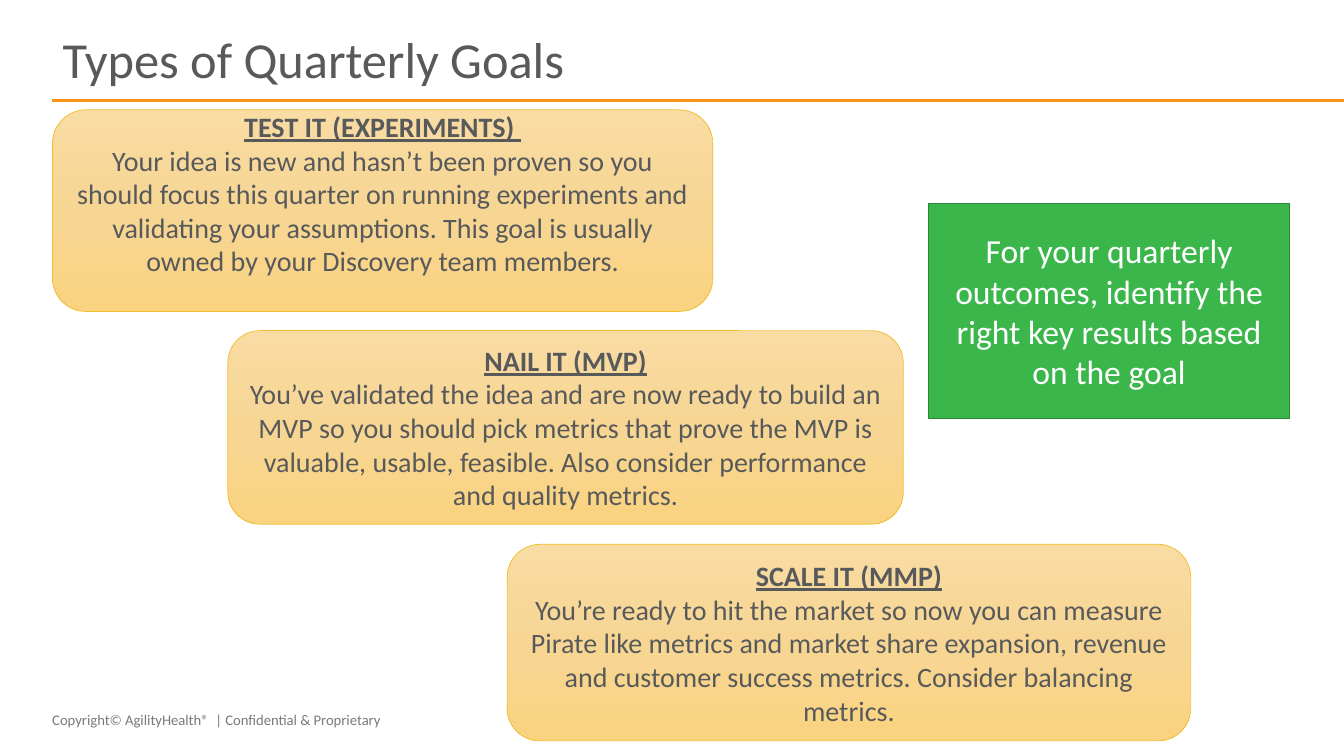
from copy import deepcopy
from lxml.etree import SubElement
from pptx import Presentation
from pptx.dml.color import RGBColor
from pptx.enum.shapes import MSO_CONNECTOR, MSO_SHAPE
from pptx.enum.text import MSO_ANCHOR, MSO_AUTO_SIZE, PP_ALIGN
from pptx.oxml.ns import qn
from pptx.util import Inches, Pt


def paint(color, value):
    color.rgb = RGBColor.from_string(value)


def style(para, size, value, align=PP_ALIGN.CENTER):
    para.alignment = align
    for run in para.runs:
        run.font.name = "Calibri"
        run.font.size = Pt(size)
        paint(run.font.color, value)


deck = Presentation()
deck.slide_width, deck.slide_height = Inches(13.33), Inches(7.5)
slide = deck.slides.add_slide(deck.slide_layouts[5])
shapes = slide.shapes

title = shapes.title
title.left, title.top = Inches(0.52), Inches(0.27)
title.width, title.height = Inches(12.29), Inches(0.7)
frame = title.text_frame
frame.text = "Types of Quarterly Goals"
frame.auto_size = MSO_AUTO_SIZE.NONE
frame.vertical_anchor = MSO_ANCHOR.MIDDLE
frame.paragraphs[0].line_spacing = 0.9
style(frame.paragraphs[0], 36, "58595B", PP_ALIGN.LEFT)

foot = shapes.add_textbox(Inches(0.42), Inches(7), Inches(4.5), Inches(0.28))
foot.text_frame.word_wrap = True
foot.text_frame.text = "Copyright© AgilityHealth®  | Confidential & Proprietary"
style(foot.text_frame.paragraphs[0], 10.5, "7A7A7A", PP_ALIGN.LEFT)

rule = shapes.add_connector(
    MSO_CONNECTOR.STRAIGHT, Inches(0.52), Inches(1), Inches(13.33), Inches(1))
rule.line.width = Pt(2)
paint(rule.line.color, "F7941C")
SubElement(rule._element.spPr, qn("a:effectLst"))

goals = [
    (0.52, 1.09, 6.55, 2, 0.39, "TEST IT (EXPERIMENTS) ",
     "Your idea is new and hasn’t been proven so you should focus this quarter "
     "on running experiments and validating your assumptions. This goal is "
     "usually owned by your Discovery team members."),
    (2.26, 3.28, 6.7, 1.92, 0.05, "NAIL IT (MVP)",
     "You’ve validated the idea and are now ready to build an MVP so you should "
     "pick metrics that prove the MVP is valuable, usable, feasible. Also "
     "consider performance and quality metrics."),
    (5.03, 5.4, 6.78, 1.95, 0.05, "SCALE IT (MMP)",
     "You’re ready to hit the market so now you can measure Pirate like metrics "
     "and market share expansion, revenue and customer success metrics. "
     "Consider balancing metrics."),
]
for left, top, width, height, inset, head, body in goals:
    goal = shapes.add_shape(
        MSO_SHAPE.ROUNDED_RECTANGLE,
        Inches(left), Inches(top), Inches(width), Inches(height))
    goal.shadow.inherit = False
    goal.fill.gradient()
    goal.fill.gradient_angle = 270
    stops = goal._element.spPr.find(qn("a:gradFill")).find(qn("a:gsLst"))
    stops.insert(1, deepcopy(stops[0]))
    stops[1].set("pos", "50000")
    for stop, value in zip(goal.fill.gradient_stops, ("F9DCA3", "F7D694", "FAD380")):
        paint(stop.color, value)
    goal.line.width = Pt(0.5)
    paint(goal.line.color, "F0BE28")
    frame = goal.text_frame
    frame.word_wrap = True
    frame.vertical_anchor = MSO_ANCHOR.MIDDLE
    frame.margin_bottom = Inches(inset)
    frame.text = head
    frame.add_paragraph().text = body
    for para in frame.paragraphs:
        style(para, 20, "58595B")
    font = frame.paragraphs[0].runs[0].font
    font.bold = font.underline = True

note = shapes.add_shape(
    MSO_SHAPE.RECTANGLE, Inches(9.21), Inches(2.02), Inches(3.58), Inches(2.13))
note.shadow.inherit = False
note.fill.solid()
paint(note.fill.fore_color, "3AB64B")
note.line.width = Pt(1)
paint(note.line.color, "2B8737")
frame = note.text_frame
frame.word_wrap = True
frame.vertical_anchor = MSO_ANCHOR.MIDDLE
frame.text = ("For your quarterly outcomes, identify the right key results "
              "based on the goal")
style(frame.paragraphs[0], 24, "FFFFFF")

deck.save("out.pptx")
